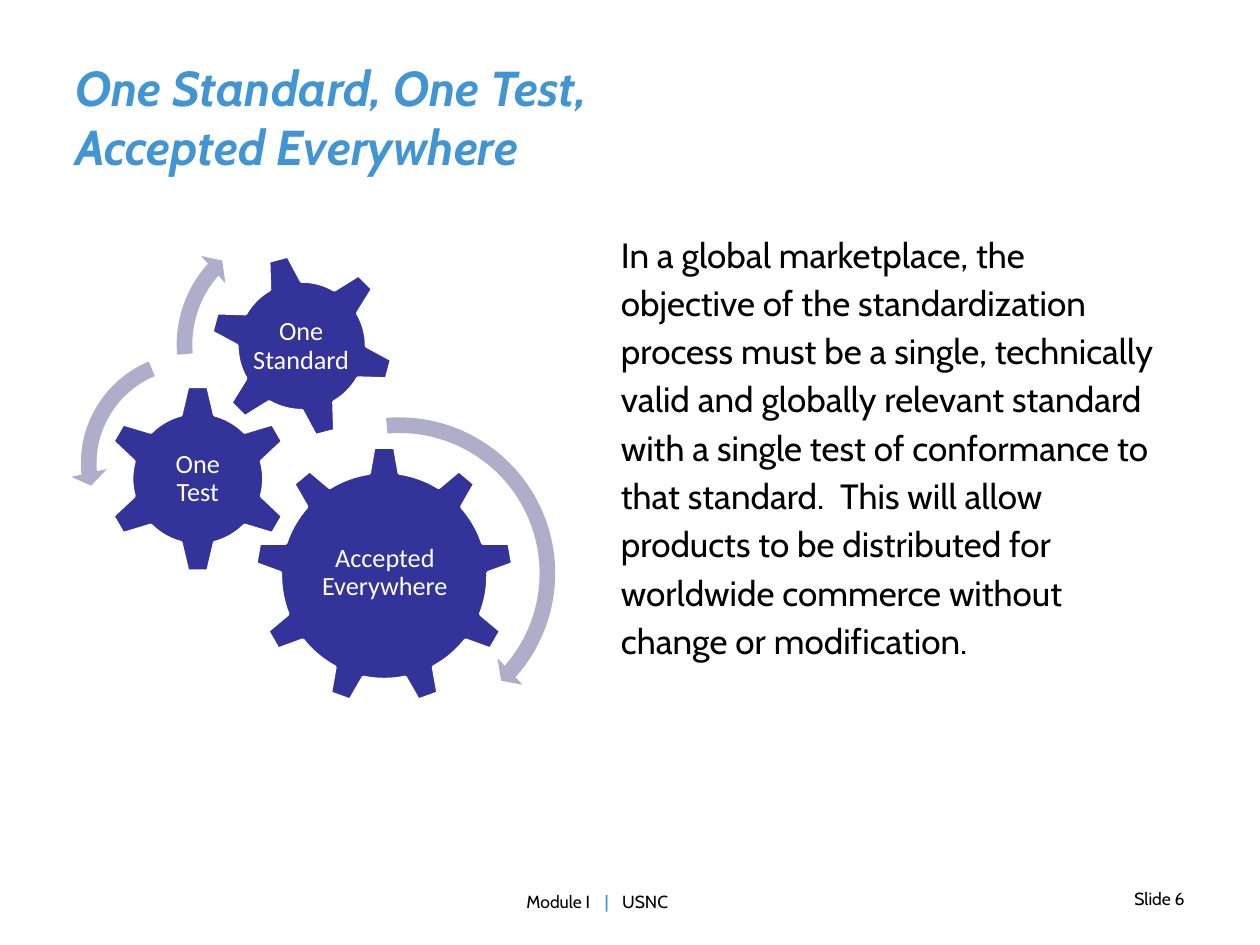
"""Build the slide on one standard, one test, accepted everywhere."""
from dataclasses import dataclass

import pptx
import pptx.dml.color
import pptx.enum.shapes
import pptx.enum.text
import pptx.oxml
import pptx.oxml.ns
import pptx.util
from pptx.util import Inches

COLORS = {
    "text": "000000",
    "accent": "4195D3",
    "gear": "333399",
    "arrow": "AEAECA",
    "white": "FFFFFF",
}
SHAPE = pptx.enum.shapes.MSO_SHAPE
ALIGN = pptx.enum.text.PP_ALIGN
ANCHOR = pptx.enum.text.MSO_ANCHOR
Box = tuple[float, float, float, float]


@dataclass(frozen=True)
class Gear:
    label: str
    preset: SHAPE
    left: float
    top: float
    size: float
    label_box: Box
    rotation: float = 0


@dataclass(frozen=True)
class Arrow:
    preset: SHAPE
    left: float
    top: float
    size: float
    adjustments: tuple[float, ...]


GEARS = [
    Gear("Accepted Everywhere", SHAPE.GEAR_9, 2.02, 3.54, 2.06, (2.44, 4.02, 1.23, 1.06)),
    Gear("One Test", SHAPE.GEAR_6, 0.82, 3.05, 1.5, (1.2, 3.43, 0.74, 0.74)),
    Gear("One Standard", SHAPE.GEAR_6, 1.66, 2.01, 1.47, (1.98, 2.34, 0.82, 0.82), 345),
]
ARROWS = [
    Arrow(SHAPE.CIRCULAR_ARROW, 1.85, 3.23, 2.64, (0.047, 2.99, 24.948, 159.082, 0.055)),
    Arrow(SHAPE.LEFT_CIRCULAR_ARROW, 0.56, 2.72, 1.92, (0.065, 4.3, 104.891, 148.378, 0.075)),
    Arrow(SHAPE.CIRCULAR_ARROW, 1.32, 1.7, 2.07, (0.06, 3.941, 133.138, 105.082, 0.07)),
]
BODY = (
    "In a global marketplace, the objective of the standardization process must be "
    "a single, technically valid and globally relevant standard with a single test "
    "of conformance to that standard.  This will allow products to be distributed "
    "for worldwide commerce without change or modification."
)
FOOTER = [("Module I", "text"), ("\t|", "accent"), ("\tUSNC", "text")]
FOOTER_TABS = (0.62, 0.76)


def rgb(name: str) -> pptx.dml.color.RGBColor:
    """Return the named colour."""
    return pptx.dml.color.RGBColor.from_string(COLORS[name])


def style_font(font, size: float, color: str = "text", name: str = "Cabin",
               bold: bool = False, italic: bool = False) -> None:
    """Set typeface, size, colour and weight."""
    font.name = name
    font.size = pptx.util.Pt(size)
    font.bold = bold
    font.italic = italic
    font.color.rgb = rgb(color)


def add_text(slide, box: Box, text: str, size: float, color: str = "text",
             name: str = "Cabin", emphasis: bool = False, align=ALIGN.LEFT,
             anchor=ANCHOR.TOP, spacing: float = 1.0, margin: float | None = None):
    """Add a wrapped text box with one styled paragraph and return the paragraph."""
    text_frame = slide.shapes.add_textbox(*map(Inches, box)).text_frame
    text_frame.word_wrap = True
    text_frame.vertical_anchor = anchor
    if margin is not None:
        text_frame.margin_left = text_frame.margin_right = Inches(margin)
        text_frame.margin_top = text_frame.margin_bottom = Inches(margin)
    paragraph = text_frame.paragraphs[0]
    paragraph.text = text
    paragraph.alignment = align
    paragraph.line_spacing = spacing
    for run in paragraph.runs:
        style_font(run.font, size, color, name, emphasis, emphasis)
    return paragraph


def add_square_shape(slide, item: Gear | Arrow, color: str):
    """Add a filled preset shape with equal sides."""
    shape = slide.shapes.add_shape(
        item.preset, *map(Inches, (item.left, item.top, item.size, item.size)))
    shape.shadow.inherit = False
    shape.fill.solid()
    shape.fill.fore_color.rgb = rgb(color)
    return shape


def add_gear(slide, gear: Gear) -> None:
    """Add a gear and its upright label."""
    shape = add_square_shape(slide, gear, "gear")
    shape.rotation = gear.rotation
    shape.line.color.rgb = rgb("white")
    shape.line.width = pptx.util.Pt(2)
    add_text(slide, gear.label_box, gear.label, 15, "white", "Calibri",
             align=ALIGN.CENTER, anchor=ANCHOR.MIDDLE, spacing=0.9, margin=0.02)


def add_arrow(slide, arrow: Arrow) -> None:
    """Add a curved arrow without outline."""
    shape = add_square_shape(slide, arrow, "arrow")
    shape.line.fill.background()
    for index, value in enumerate(arrow.adjustments):
        shape.adjustments[index] = value


def add_footer(slide) -> None:
    """Add the footer with its parts set on tab stops."""
    paragraph = add_text(slide, (4.08, 7.02, 2.42, 0.44), "", 10)
    properties = paragraph._p.get_or_add_pPr()
    tab_list = pptx.oxml.parse_xml(
        f'<a:tabLst {pptx.oxml.ns.nsdecls("a")}>'
        + "".join(f'<a:tab pos="{Inches(stop)}" algn="l"/>' for stop in FOOTER_TABS)
        + "</a:tabLst>")
    properties.append(tab_list)
    for text, color in FOOTER:
        run = paragraph.add_run()
        run.text = text
        style_font(run.font, 10, color, bold=color == "accent")


def main() -> None:
    """Create and save the presentation."""
    presentation = pptx.Presentation()
    presentation.slide_width = Inches(10)
    presentation.slide_height = Inches(7.5)
    slide = presentation.slides.add_slide(presentation.slide_layouts[6])
    add_footer(slide)
    add_text(slide, (0.5, 0.3, 9, 1.25), "One Standard, One Test,\vAccepted Everywhere",
             28, "accent", emphasis=True, anchor=ANCHOR.MIDDLE)
    for gear in GEARS:
        add_gear(slide, gear)
    for arrow in ARROWS:
        add_arrow(slide, arrow)
    add_text(slide, (8.42, 7, 1.08, 0.33), "Slide 6", 10, align=ALIGN.RIGHT)
    add_text(slide, (4.83, 1.75, 4.5, 4.95), BODY, 20, spacing=1.15)
    presentation.save("out.pptx")


if __name__ == "__main__":
    main()
